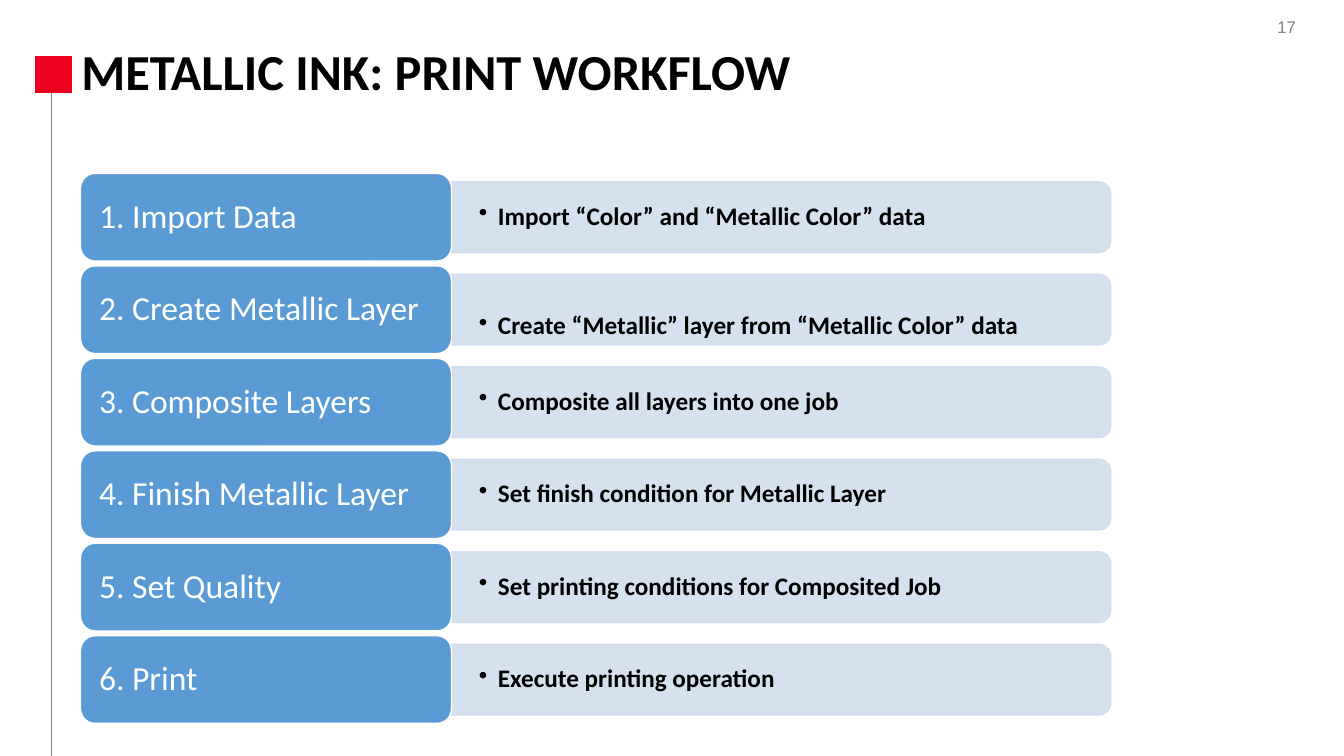
"""Build the metallic ink print workflow slide."""
from dataclasses import dataclass
from typing import Any

from lxml.etree import SubElement
from pptx import Presentation
from pptx.dml.color import RGBColor
from pptx.enum.shapes import MSO_CONNECTOR, MSO_SHAPE
from pptx.enum.text import MSO_ANCHOR, PP_ALIGN
from pptx.oxml.ns import qn
from pptx.util import Cm, Pt


@dataclass(frozen=True)
class Theme:
    heading_font: str = "Calibri"
    number_font: str = "Arial"
    black: str = "000000"
    white: str = "FFFFFF"
    gray: str = "808080"
    red: str = "EC0121"
    blue: str = "5B9BD5"
    pale_blue: str = "D2DEEF"
    title_size: int = 36
    label_size: int = 24
    detail_size: int = 18
    number_size: int = 12


@dataclass(frozen=True)
class Box:
    left: float
    top: float
    width: float
    height: float

    def lengths(self) -> tuple:
        return Cm(self.left), Cm(self.top), Cm(self.width), Cm(self.height)


@dataclass(frozen=True)
class TextStyle:
    size: int
    color: str
    font: str = Theme.heading_font
    bold: bool = False
    align: Any = PP_ALIGN.LEFT
    anchor: Any = MSO_ANCHOR.MIDDLE
    spacing: float = 0.9
    inset_x: float = 0.25
    inset_y: float = 0.13
    bullet: bool = False


@dataclass(frozen=True)
class Step:
    label: str
    detail: str
    detail_drop: float = 0


THEME = Theme()
TITLE_STYLE = TextStyle(THEME.title_size, THEME.black, bold=True)
NUMBER_STYLE = TextStyle(THEME.number_size, THEME.gray, THEME.number_font,
                         align=PP_ALIGN.CENTER, anchor=MSO_ANCHOR.TOP, spacing=1.0)
LABEL_STYLE = TextStyle(THEME.label_size, THEME.white, inset_x=0.36)
DETAIL_STYLE = TextStyle(THEME.detail_size, THEME.black, bold=True,
                         inset_x=0.69, inset_y=0.36, bullet=True)

STEPS = [
    Step("1. Import Data", "Import “Color” and “Metallic Color” data"),
    Step("2. Create Metallic Layer",
         "Create “Metallic” layer from “Metallic Color” data", 0.43),
    Step("3. Composite Layers", "Composite all layers into one job"),
    Step("4. Finish Metallic Layer", "Set finish condition for Metallic Layer"),
    Step("5. Set Quality", "Set printing conditions for Composited Job"),
    Step("6. Print", "Execute printing operation"),
]
LABEL = Box(2.03, 4.37, 9.35, 2.21)
ROW_PITCH = 2.33
PANEL_WIDTH, PANEL_HEIGHT = 16.61, 1.78
DETAIL_HEIGHT = 1.6


def set_values(target: Any, values: dict[str, Any]) -> None:
    """Set every named attribute on the target."""
    for name, value in values.items():
        setattr(target, name, value)


def write_text(shape: Any, text: str, style: TextStyle) -> None:
    """Fill a shape with one styled paragraph."""
    frame = shape.text_frame
    set_values(frame, {
        "word_wrap": True, "vertical_anchor": style.anchor,
        "margin_left": Cm(style.inset_x), "margin_right": Cm(style.inset_x),
        "margin_top": Cm(style.inset_y), "margin_bottom": Cm(style.inset_y),
    })
    paragraph = frame.paragraphs[0]
    set_values(paragraph, {"alignment": style.align, "line_spacing": style.spacing})
    if style.bullet:
        properties = paragraph._p.get_or_add_pPr()
        properties.set("marL", str(Cm(0.48)))
        properties.set("indent", str(-Cm(0.48)))
        SubElement(properties, qn("a:buChar"), char="•")
    run = paragraph.add_run()
    run.text = text
    set_values(run.font, {"name": style.font, "size": Pt(style.size), "bold": style.bold})
    run.font.color.rgb = RGBColor.from_string(style.color)


def add_text(slide: Any, box: Box, text: str, style: TextStyle) -> None:
    """Add a text box."""
    write_text(slide.shapes.add_textbox(*box.lengths()), text, style)


def add_block(slide: Any, kind: Any, box: Box, fill: str, line: str,
              opacity: int = 100) -> Any:
    """Add a filled and outlined preset shape."""
    shape = slide.shapes.add_shape(kind, *box.lengths())
    shape.shadow.inherit = False
    shape.line.width = Pt(1)
    shape.fill.solid()
    shape.line.fill.solid()
    for paint, color in ((shape.fill, fill), (shape.line.fill, line)):
        paint.fore_color.rgb = RGBColor.from_string(color)
    if opacity < 100:
        for color_element in shape._element.spPr.iter(qn("a:srgbClr")):
            SubElement(color_element, qn("a:alpha"), val=str(opacity * 1000))
    return shape


def add_rule(slide: Any, x: float, top: float, bottom: float) -> None:
    """Add the thin vertical rule below the title marker."""
    rule = slide.shapes.add_connector(MSO_CONNECTOR.STRAIGHT,
                                      Cm(x), Cm(top), Cm(x), Cm(bottom))
    rule.line.width = Pt(1)
    rule.line.color.rgb = RGBColor.from_string(THEME.gray)
    SubElement(rule._element.spPr, qn("a:effectLst"))


def add_step(slide: Any, step: Step, row: int) -> None:
    """Add one workflow row with its label and detail panel."""
    top = LABEL.top + row * ROW_PITCH
    middle = top + LABEL.height / 2
    panel_left = LABEL.left + LABEL.width
    upright = Box(panel_left + (PANEL_WIDTH - PANEL_HEIGHT) / 2,
                  middle - PANEL_WIDTH / 2, PANEL_HEIGHT, PANEL_WIDTH)
    panel = add_block(slide, MSO_SHAPE.ROUND_2_SAME_RECTANGLE, upright,
                      THEME.pale_blue, THEME.pale_blue, opacity=90)
    panel.rotation = 90
    detail_top = middle - DETAIL_HEIGHT / 2 + step.detail_drop
    add_text(slide, Box(panel_left, detail_top, PANEL_WIDTH, DETAIL_HEIGHT),
             step.detail, DETAIL_STYLE)
    label = add_block(slide, MSO_SHAPE.ROUNDED_RECTANGLE,
                      Box(LABEL.left, top, LABEL.width, LABEL.height),
                      THEME.blue, THEME.white)
    write_text(label, step.label, LABEL_STYLE)


def main() -> None:
    """Create and save the presentation."""
    presentation = Presentation()
    set_values(presentation, {"slide_width": Cm(33.87), "slide_height": Cm(19.05)})
    slide = presentation.slides.add_slide(presentation.slide_layouts[6])
    add_text(slide, Box(31.55, 0.3, 1.75, 0.76), "17", NUMBER_STYLE)
    add_block(slide, MSO_SHAPE.RECTANGLE, Box(0.9, 1.43, 0.9, 0.9), THEME.red, THEME.red)
    add_rule(slide, 1.3, 2.34, 19.05)
    add_text(slide, Box(1.8, 0.99, 26.19, 1.78), "METALLIC INK: PRINT WORKFLOW", TITLE_STYLE)
    for row, step in enumerate(STEPS):
        add_step(slide, step, row)
    presentation.save("out.pptx")


if __name__ == "__main__":
    main()
